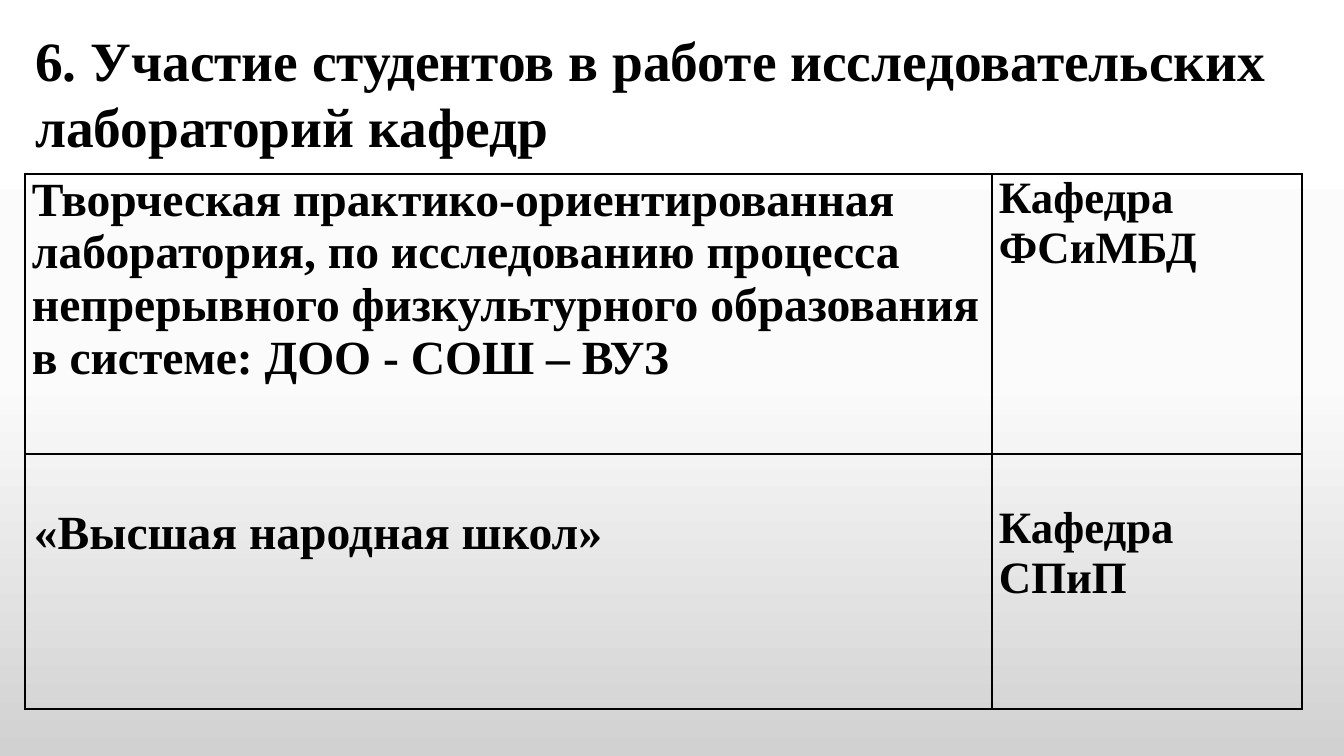
from copy import deepcopy
from dataclasses import dataclass

from pptx import Presentation, util as u
from pptx.dml.color import RGBColor as Rgb
from pptx.enum import text
from pptx.oxml import parse_xml
from pptx.oxml.ns import nsdecls, qn

PX = 9071


@dataclass(frozen=True)
class Theme:
    """Hold the colours and type sizes of the slide."""
    face: str = "Times New Roman"
    ink: str = "000000"
    grad: tuple = ((0, "FFFFFF"), (0.5, "FBFBFB"), (1, "D1D1D1"))
    head: float = 39.6
    lab: int = 34
    dept: int = 32
    rule: int = 1


THEME = Theme()
TITLE = "6. Участие студентов в работе исследовательских лабораторий кафедр"
LABS = (
    ("Творческая практико-ориентированная лаборатория, по исследованию процесса "
     "непрерывного физкультурного образования в системе: ДОО - СОШ – ВУЗ",
     "Кафедра ФСиМБД"),
    ("«Высшая народная школ»", "Кафедра СПиП"),
)
COLS = (967, 310)
ROWS = (280, 255)
PADS = ((0, 0), (53, 50))
LEFTS = ((7, 7), (9, 7))


def px(num):
    """Turn pixels into EMU."""
    return u.Emu(num * PX)


def write(frame, words, size):
    """Write one bold paragraph and return it."""
    frame.text = words
    para = frame.paragraphs[0]
    font = para.font
    font.name, font.size, font.bold = THEME.face, u.Pt(size), True
    font.color.rgb = Rgb.from_string(THEME.ink)
    return para


def paint(slide):
    """Fill the background with the vertical gradient."""
    fill = slide.background.fill
    fill.gradient()
    fill.gradient_angle = 270
    stops = slide.element.find(".//" + qn("a:gsLst"))
    stops.append(deepcopy(stops[0]))
    for stop, (pos, tone) in zip(fill.gradient_stops, THEME.grad):
        stop.position = pos
        stop.color.rgb = Rgb.from_string(tone)


def add_head(slide, box):
    """Place the title in its box."""
    head = slide.shapes.title
    head.left, head.top, head.width, head.height = map(px, box)
    frame = head.text_frame
    frame.word_wrap = True
    frame.auto_size = text.MSO_AUTO_SIZE.NONE
    frame.vertical_anchor = text.MSO_ANCHOR.MIDDLE
    frame.margin_left = frame.margin_right = px(10)
    frame.margin_top = frame.margin_bottom = 0
    para = write(frame, TITLE, THEME.head)
    para.alignment = text.PP_ALIGN.LEFT
    para.line_spacing = 1.0


def edge(cell):
    """Draw the four borders of a cell."""
    props = cell._tc.get_or_add_tcPr()
    for spot, side in enumerate("LRTB"):
        props.insert(spot, parse_xml(
            f'<a:ln{side} {nsdecls("a")} w="{u.Pt(THEME.rule)}"><a:solidFill>'
            f'<a:srgbClr val="{THEME.ink}"/></a:solidFill></a:ln{side}>'))


def add_labs(slide, box):
    """Place the table of laboratories and departments."""
    table = slide.shapes.add_table(len(ROWS), len(COLS), *map(px, box)).table
    table.first_row = table.horz_banding = False
    for col, width in zip(table.columns, COLS):
        col.width = px(width)
    for row, height in zip(table.rows, ROWS):
        row.height = px(height)
    for r, line in enumerate(LABS):
        for c, words in enumerate(line):
            cell = table.cell(r, c)
            cell.fill.background()
            edge(cell)
            cell.margin_left, cell.margin_right = px(LEFTS[r][c]), px(7)
            cell.margin_top, cell.margin_bottom = px(PADS[r][c]), 0
            para = write(cell.text_frame, words, (THEME.lab, THEME.dept)[c])
            para.alignment = (text.PP_ALIGN.JUSTIFY if r or c
                              else text.PP_ALIGN.LEFT)


def main():
    """Build and save the slide."""
    deck = Presentation()
    deck.slide_width, deck.slide_height = px(1344), px(756)
    slide = deck.slides.add_slide(deck.slide_layouts[5])
    paint(slide)
    add_head(slide, (25, 30, 1277, 125))
    add_labs(slide, (25, 174, sum(COLS), sum(ROWS)))
    deck.save("out.pptx")


if __name__ == "__main__":
    main()
